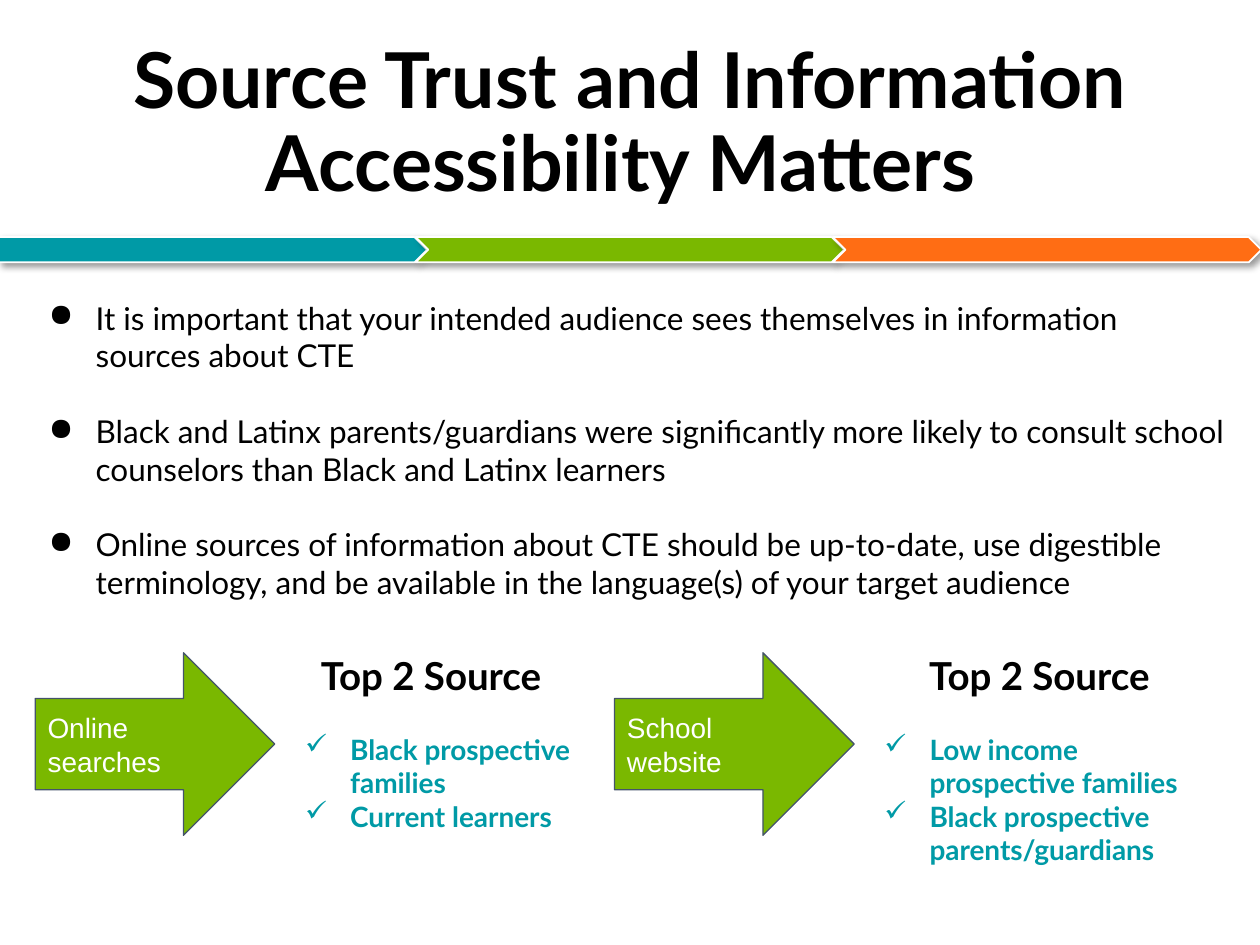
from dataclasses import dataclass

import pptx
import pptx.dml.color
import pptx.enum.shapes
import pptx.enum.text
import pptx.oxml
import pptx.oxml.ns
import pptx.util

Cm = pptx.util.Cm
Pt = pptx.util.Pt
Shape = pptx.enum.shapes.MSO_SHAPE
Align = pptx.enum.text.PP_ALIGN
Anchor = pptx.enum.text.MSO_ANCHOR
Fit = pptx.enum.text.MSO_AUTO_SIZE

COLORS = {
    "teal": "009AA6",
    "green": "7AB800",
    "orange": "FF6D14",
    "slate": "44546A",
    "black": "000000",
    "white": "FFFFFF",
}
PAD = 0.25


@dataclass
class Line:
    text: str
    size: float
    color: str = "black"
    bold: bool = False
    font: str = "Lato"
    align: Align = Align.LEFT
    mark: str = ""
    hang: float = 0
    before: float = 0


@dataclass
class Source:
    label: str
    groups: list[str]
    width: float
    height: float


def get_color(name: str) -> pptx.dml.color.RGBColor:
    return pptx.dml.color.RGBColor.from_string(COLORS[name])


def add_bullet(para, line: Line) -> None:
    props = para._p.get_or_add_pPr()
    props.set("marL", str(Cm(1.27)))
    props.set("indent", str(-Cm(line.hang)))
    space = pptx.oxml.ns.nsdecls("a")
    color = COLORS[line.color]
    for part in (
        f'<a:buClr {space}><a:srgbClr val="{color}"/></a:buClr>',
        f'<a:buChar {space} char="{line.mark}"/>',
    ):
        props.append(pptx.oxml.parse_xml(part))


def fill_text(frame, lines: list[Line], anchor: Anchor, pad: float) -> None:
    frame.word_wrap = True
    frame.vertical_anchor = anchor
    frame.margin_left = frame.margin_right = Cm(PAD)
    frame.margin_top = frame.margin_bottom = Cm(pad)
    for i, line in enumerate(lines):
        para = frame.add_paragraph() if i else frame.paragraphs[0]
        para.alignment = line.align
        if line.before:
            para.space_before = Pt(line.before)
        if line.mark:
            add_bullet(para, line)
        run = para.add_run()
        run.text = line.text
        run.font.name = line.font
        run.font.size = Pt(line.size)
        run.font.bold = line.bold
        run.font.color.rgb = get_color(line.color)


def add_text(slide, box: tuple, lines: list[Line],
             anchor: Anchor = Anchor.TOP, pad: float = PAD):
    frame = slide.shapes.add_textbox(*map(Cm, box)).text_frame
    fill_text(frame, lines, anchor, pad)
    return frame


def add_shape(slide, kind: Shape, box: tuple, fill: str, edge: str, width: float):
    shape = slide.shapes.add_shape(kind, *map(Cm, box))
    shape.shadow.inherit = False
    shape.fill.solid()
    shape.fill.fore_color.rgb = get_color(fill)
    shape.line.color.rgb = get_color(edge)
    shape.line.width = Pt(width)
    return shape


def add_shadow(shape) -> None:
    effects = shape._element.spPr.find(pptx.oxml.ns.qn("a:effectLst"))
    effects.append(pptx.oxml.parse_xml(
        f'<a:outerShdw {pptx.oxml.ns.nsdecls("a")} blurRad="{Pt(4)}" '
        f'dist="{Pt(3)}" dir="2700000" rotWithShape="0">'
        f'<a:srgbClr val="{COLORS["black"]}"><a:alpha val="40000"/></a:srgbClr>'
        '</a:outerShdw>'
    ))


def add_band(slide) -> None:
    parts = ((Shape.PENTAGON, "teal"), (Shape.CHEVRON, "green"),
             (Shape.CHEVRON, "orange"))
    for i, (kind, color) in enumerate(parts):
        box = (-0.03 + 8.41 * i, 4.78, 8.64, 0.51)
        add_shadow(add_shape(slide, kind, box, color, "white", 1))


def add_source(slide, left: float, source: Source) -> None:
    arrow = add_shape(slide, Shape.RIGHT_ARROW, (left, 13.16, 4.83, 3.68),
                      "green", "slate", 0.75)
    label = Line(source.label, 16, "white", font="Arial")
    fill_text(arrow.text_frame, [label], Anchor.MIDDLE, PAD)
    lines = [Line("Top 2 Source", 22, bold=True, align=Align.CENTER)]
    for i, group in enumerate(source.groups):
        lines.append(Line(group, 16, "teal", True, mark="✓", hang=0.91,
                          before=0 if i else 19.2))
    box = (left + 4.83, 12.9, source.width, source.height)
    add_text(slide, box, lines).auto_size = Fit.SHAPE_TO_FIT_TEXT


def main() -> None:
    deck = pptx.Presentation()
    deck.slide_width, deck.slide_height = Cm(25.4), Cm(19.05)
    slide = deck.slides.add_slide(deck.slide_layouts[6])

    # Coloured band under the title
    add_band(slide)

    # Title
    title = Line("Source Trust and Information Accessibility Matters ", 44,
                 bold=True, align=Align.CENTER)
    frame = add_text(slide, (0.71, 0.69, 23.98, 3.68), [title],
                     Anchor.MIDDLE, 0.13)
    frame.paragraphs[0].line_spacing = 0.9

    # Main points
    points = (
        "It is important that your intended audience sees themselves in "
        "information sources about CTE",
        "Black and Latinx parents/guardians were significantly more likely to "
        "consult school counselors than Black and Latinx learners",
        "Online sources of information about CTE should be up-to-date, use "
        "digestible terminology, and be available in the language(s) of your "
        "target audience",
    )
    lines = [Line(point, 18, mark="●", hang=0.95, before=21.6 if i else 0)
             for i, point in enumerate(points)]
    frame = add_text(slide, (0.41, 5.77, 24.59, 6.68), lines)
    frame.auto_size = Fit.SHAPE_TO_FIT_TEXT

    # Sources with their audiences
    sources = (
        Source("Online searches",
               ["Black prospective families", "Current learners"], 6.3, 4.19),
        Source("School website",
               ["Low income prospective families",
                "Black prospective parents/guardians"], 7.47, 4.88),
    )
    for i, source in enumerate(sources):
        add_source(slide, 0.71 + 11.68 * i, source)

    deck.save("out.pptx")


if __name__ == "__main__":
    main()
